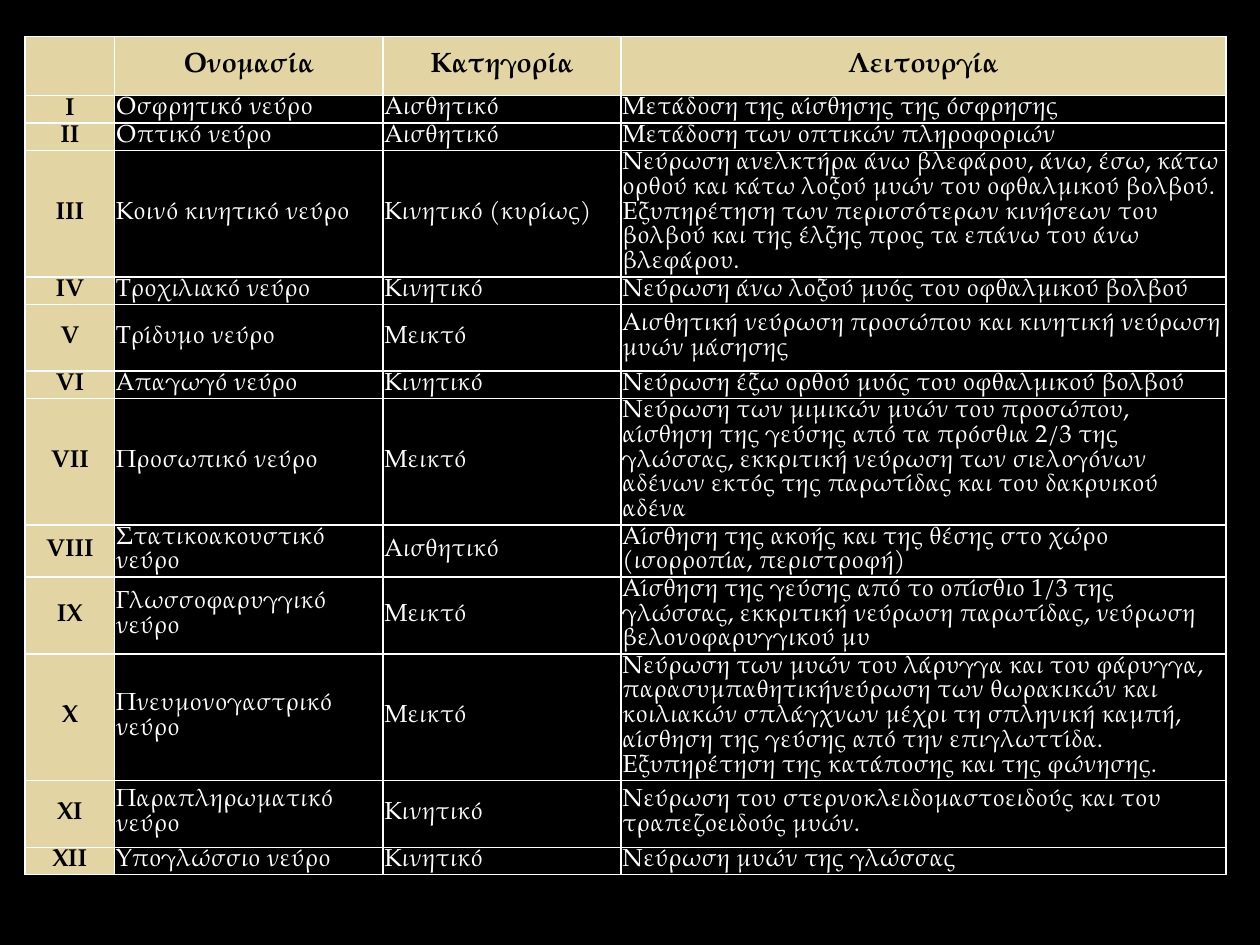
import pptx
import pptx.util
import pptx.dml.color
import pptx.enum.text
import pptx.oxml
import pptx.oxml.ns
from dataclasses import dataclass


@dataclass(frozen=True)
class Theme:
    font: str = "TeX Gyre Pagella"
    background: str = "000000"
    label_fill: str = "E2D5A3"
    label_text: str = "000000"
    body_text: str = "FFFFFF"
    border: str = "FFFFFF"
    border_width: int = 12700
    header_size: int = 16
    body_size: int = 14


def color(value):
    return pptx.dml.color.RGBColor.from_string(value)


def add_borders(cell, theme):
    properties = cell._tc.get_or_add_tcPr()
    for position, side in enumerate(("lnL", "lnR", "lnT", "lnB")):
        line = pptx.oxml.parse_xml(
            f'<a:{side} {pptx.oxml.ns.nsdecls("a")} w="{theme.border_width}">'
            f'<a:solidFill><a:srgbClr val="{theme.border}"/></a:solidFill></a:{side}>'
        )
        properties.insert(position, line)


theme = Theme()
presentation = pptx.Presentation()
presentation.slide_width = pptx.util.Inches(10)
presentation.slide_height = pptx.util.Inches(7.5)
unit = presentation.slide_width / 100
slide = presentation.slides.add_slide(presentation.slide_layouts[6])
slide.background.fill.solid()
slide.background.fill.fore_color.rgb = color(theme.background)

column_units = [7.1, 21.3, 18.9, 48]
nerves = [
    (4.7, "", "Ονομασία", "Κατηγορία", "Λειτουργία"),
    (2, "Ι", "Οσφρητικό νεύρο", "Αισθητικό", "Μετάδοση της αίσθησης της όσφρησης"),
    (1.6, "ΙΙ", "Οπτικό νεύρο", "Αισθητικό", "Μετάδοση των οπτικών πληροφοριών"),
    (7.9, "ΙΙΙ", "Κοινό κινητικό νεύρο", "Κινητικό (κυρίως)",
     "Νεύρωση ανελκτήρα άνω βλεφάρου, άνω, έσω, κάτω ορθού και κάτω λοξού μυών "
     "του οφθαλμικού βολβού. Εξυπηρέτηση των περισσότερων κινήσεων του βολβού "
     "και της έλξης προς τα επάνω του άνω βλεφάρου."),
    (2, "ΙV", "Τροχιλιακό νεύρο", "Κινητικό", "Νεύρωση άνω λοξού μυός του οφθαλμικού βολβού"),
    (5.3, "V", "Τρίδυμο νεύρο", "Μεικτό",
     "Αισθητική νεύρωση προσώπου και κινητική νεύρωση μυών μάσησης"),
    (2, "VI", "Απαγωγό νεύρο", "Κινητικό", "Νεύρωση έξω ορθού μυός του οφθαλμικού βολβού"),
    (7.1, "VII", "Προσωπικό νεύρο", "Μεικτό",
     "Νεύρωση των μιμικών μυών του προσώπου, αίσθηση της γεύσης από τα πρόσθια 2/3 "
     "της γλώσσας, εκκριτική νεύρωση των σιελογόνων αδένων εκτός της παρωτίδας "
     "και του δακρυικού αδένα"),
    (2.3, "VIII", "Στατικοακουστικό νεύρο", "Αισθητικό",
     "Αίσθηση της ακοής και της θέσης στο χώρο (ισορροπία, περιστροφή)"),
    (4.2, "IX", "Γλωσσοφαρυγγικό νεύρο", "Μεικτό",
     "Αίσθηση της γεύσης από το οπίσθιο 1/3 της γλώσσας, εκκριτική νεύρωση "
     "παρωτίδας, νεύρωση βελονοφαρυγγικού μυ"),
    (9, "X", "Πνευμονογαστρικό νεύρο", "Μεικτό",
     "Νεύρωση των μυών του λάρυγγα και του φάρυγγα, παρασυμπαθητικήνεύρωση των "
     "θωρακικών και κοιλιακών σπλάγχνων μέχρι τη σπληνική καμπή, αίσθηση της γεύσης "
     "από την επιγλωττίδα. Εξυπηρέτηση της κατάποσης και της φώνησης."),
    (5.3, "ΧΙ", "Παραπληρωματικό νεύρο", "Κινητικό",
     "Νεύρωση του στερνοκλειδομαστοειδούς και του τραπεζοειδούς μυών."),
    (1.6, "ΧΙΙ", "Υπογλώσσιο νεύρο", "Κινητικό", "Νεύρωση μυών της γλώσσας"),
]

table_height = int(70.2 * unit)
table_shape = slide.shapes.add_table(
    len(nerves), len(column_units), int(2 * unit), int(2.9 * unit),
    int(sum(column_units) * unit), table_height,
)
table = table_shape.table
table.first_row = False
table.horz_banding = False
for column, width in zip(table.columns, column_units):
    column.width = int(width * unit)

for row_index, (height, *texts) in enumerate(nerves):
    table.rows[row_index].height = int(height * unit)
    for column_index, text in enumerate(texts):
        cell = table.cell(row_index, column_index)
        is_label = row_index == 0 or column_index == 0
        cell.margin_left = cell.margin_right = int(0.1 * unit)
        cell.margin_top = cell.margin_bottom = int(0.1 * unit)
        cell.vertical_anchor = pptx.enum.text.MSO_ANCHOR.MIDDLE
        if is_label:
            cell.fill.solid()
            cell.fill.fore_color.rgb = color(theme.label_fill)
        else:
            cell.fill.background()
        add_borders(cell, theme)
        cell.text = text
        paragraph = cell.text_frame.paragraphs[0]
        if is_label:
            paragraph.alignment = pptx.enum.text.PP_ALIGN.CENTER
        paragraph.font.name = theme.font
        paragraph.font.size = pptx.util.Pt(theme.body_size if row_index else theme.header_size)
        paragraph.font.bold = is_label
        paragraph.font.color.rgb = color(theme.label_text if is_label else theme.body_text)

table_shape.height = table_height
presentation.save("out.pptx")
